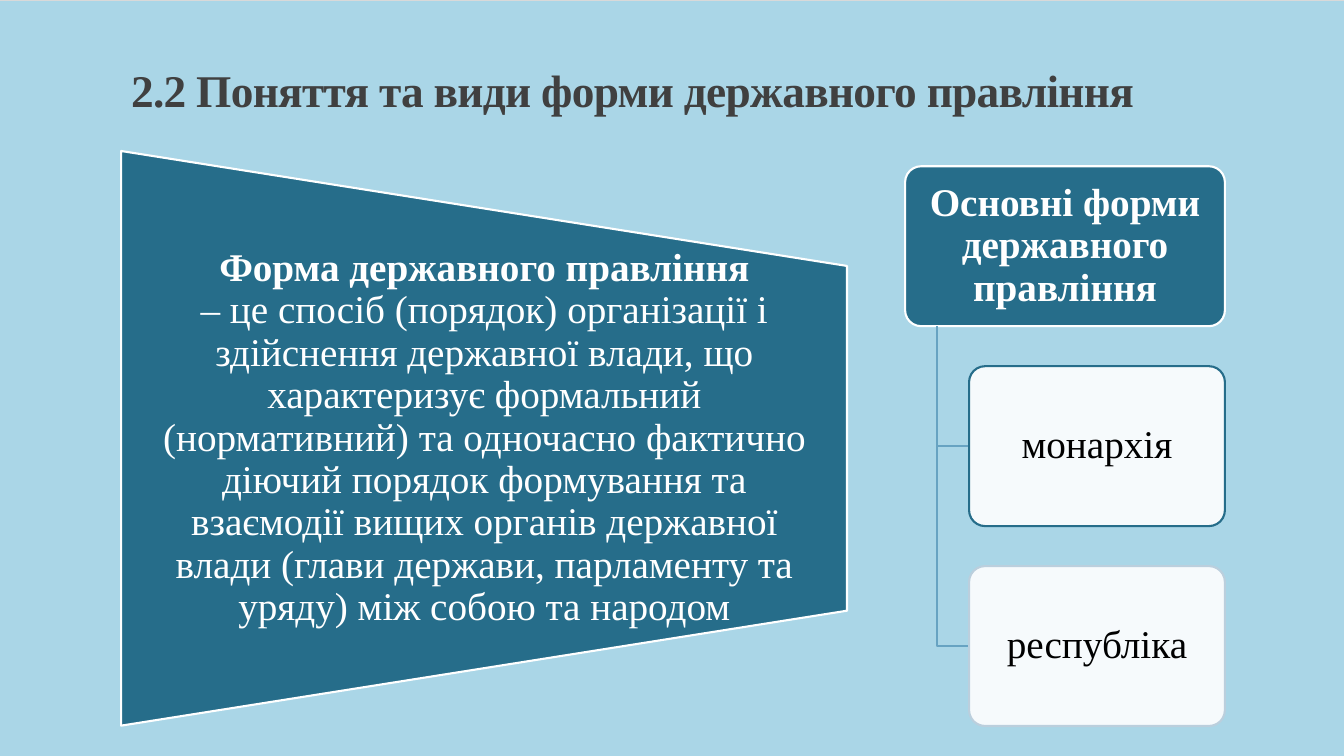
import pptx
import pptx.util
import pptx.dml.color
import pptx.enum.dml
import pptx.enum.shapes
import pptx.enum.text
import pptx.oxml.ns
from lxml import etree

Cm, Pt = pptx.util.Cm, pptx.util.Pt
SHAPE = pptx.enum.shapes.MSO_SHAPE
ALIGN = pptx.enum.text.PP_ALIGN
ANCHOR = pptx.enum.text.MSO_ANCHOR

FONT = "Times New Roman"
COLORS = {
    "sky": "AAD6E7",
    "gray": "D9D9D9",
    "title": "404040",
    "teal": "266D8A",
    "stem": "67A3C2",
    "pale": "BBCFDD",
    "white": "FFFFFF",
    "black": "000000",
}
TERM = "Форма державного правління"
MEANING = (
    "– це спосіб (порядок) організації і здійснення державної влади, "
    "що характеризує формальний (нормативний) та одночасно фактично "
    "діючий порядок формування та взаємодії вищих органів державної "
    "влади (глави держави, парламенту та уряду) між собою та народом"
)


def rgb(name):
    return pptx.dml.color.RGBColor.from_string(COLORS[name])


def paint(shape, fill, line):
    shape.shadow.inherit = False
    if fill:
        shape.fill.solid()
        shape.fill.fore_color.rgb = rgb(fill)
    else:
        shape.fill.background()
    shape.line.color.rgb = rgb(line)
    shape.line.width = Pt(1.5)


def fade(shape, share):
    """Set the opacity of a solid fill, in percent."""
    color = shape.fill._xPr.find(".//" + pptx.oxml.ns.qn("a:srgbClr"))
    etree.SubElement(color, pptx.oxml.ns.qn("a:alpha"), val=str(share * 1000))


def style(run, color, size=28, bold=False):
    font = run.font
    font.name, font.size, font.bold = FONT, Pt(size), bold
    font.color.rgb = rgb(color)


def set_frame(frame, side, edge):
    frame.word_wrap = True
    frame.vertical_anchor = ANCHOR.MIDDLE
    frame.margin_left = frame.margin_right = Cm(side)
    frame.margin_top = frame.margin_bottom = Cm(edge)
    for para in frame.paragraphs:
        para.alignment = ALIGN.CENTER
        para.line_spacing = 0.9


def add_title(slide, text):
    title = slide.shapes.title
    title.left, title.top = Cm(3.05), Cm(1.24)
    title.width, title.height = Cm(27.94), Cm(1.83)
    frame = title.text_frame
    frame.text = text
    frame.auto_size = pptx.enum.text.MSO_AUTO_SIZE.NONE
    frame.vertical_anchor = ANCHOR.BOTTOM
    para = frame.paragraphs[0]
    para.alignment = ALIGN.LEFT
    para.line_spacing = 0.85
    run = para.runs[0]
    style(run, "title", 32.4, True)
    run.font._element.set("spc", "-50")


def add_funnel(slide):
    # The shape is turned, so its text sits in an upright box
    funnel = slide.shapes.add_shape(
        SHAPE.FLOWCHART_MANUAL_OPERATION,
        Cm(4.96), Cm(1.9), Cm(14.48), Cm(18.29))
    funnel.rotation = 270
    paint(funnel, "teal", "white")

    box = slide.shapes.add_textbox(Cm(3.06), Cm(6.7), Cm(18.29), Cm(8.69))
    frame = box.text_frame
    frame.text = TERM + "\v" + MEANING
    set_frame(frame, 0.55, 0)
    for run, bold in zip(frame.paragraphs[0].runs, (True, False)):
        style(run, "white", bold=bold)


def add_card(slide, text, left, top, width, height, fill, line, ink, bold):
    card = slide.shapes.add_shape(
        SHAPE.ROUNDED_RECTANGLE, Cm(left), Cm(top), Cm(width), Cm(height))
    card.adjustments[0] = 0.1
    paint(card, fill, line)
    card.text_frame.text = text
    set_frame(card.text_frame, 0.15, 0.1)
    style(card.text_frame.paragraphs[0].runs[0], ink, bold=bold)
    return card


def add_elbow(slide, left, top, right, bottom):
    path = slide.shapes.build_freeform(Cm(left), Cm(top))
    path.add_line_segments(
        [(Cm(left), Cm(bottom)), (Cm(right), Cm(bottom))], close=False)
    paint(path.convert_to_shape(), None, "stem")


def add_tree(slide):
    left, top, width, height = 22.81, 4.19, 8.06, 4.03
    step = height * 1.25
    stem, branch = left + width * 0.1, left + width * 0.2
    add_card(slide, "Основні форми державного правління",
             left, top, width, height, "teal", "white", "white", True)
    kinds = (("монархія", "teal"), ("республіка", "pale"))
    for row, (text, line) in enumerate(kinds, 1):
        y = top + row * step
        add_elbow(slide, stem, top + height, branch, y + height / 2)
        card = add_card(slide, text, branch, y, width * 0.8, height,
                        "white", line, "black", False)
        fade(card, 90)


def main():
    deck = pptx.Presentation()
    deck.slide_width, deck.slide_height = Cm(33.87), Cm(19.05)
    slide = deck.slides.add_slide(deck.slide_layouts[5])

    # Background
    back = slide.background.fill
    back.patterned()
    back.pattern = pptx.enum.dml.MSO_PATTERN.DARK_HORIZONTAL
    back.fore_color.rgb = rgb("sky")
    back.back_color.rgb = rgb("gray")

    # Heading, definition and forms
    add_title(slide, "2.2 Поняття та види форми державного правління")
    add_funnel(slide)
    add_tree(slide)
    deck.save("out.pptx")


if __name__ == "__main__":
    main()
